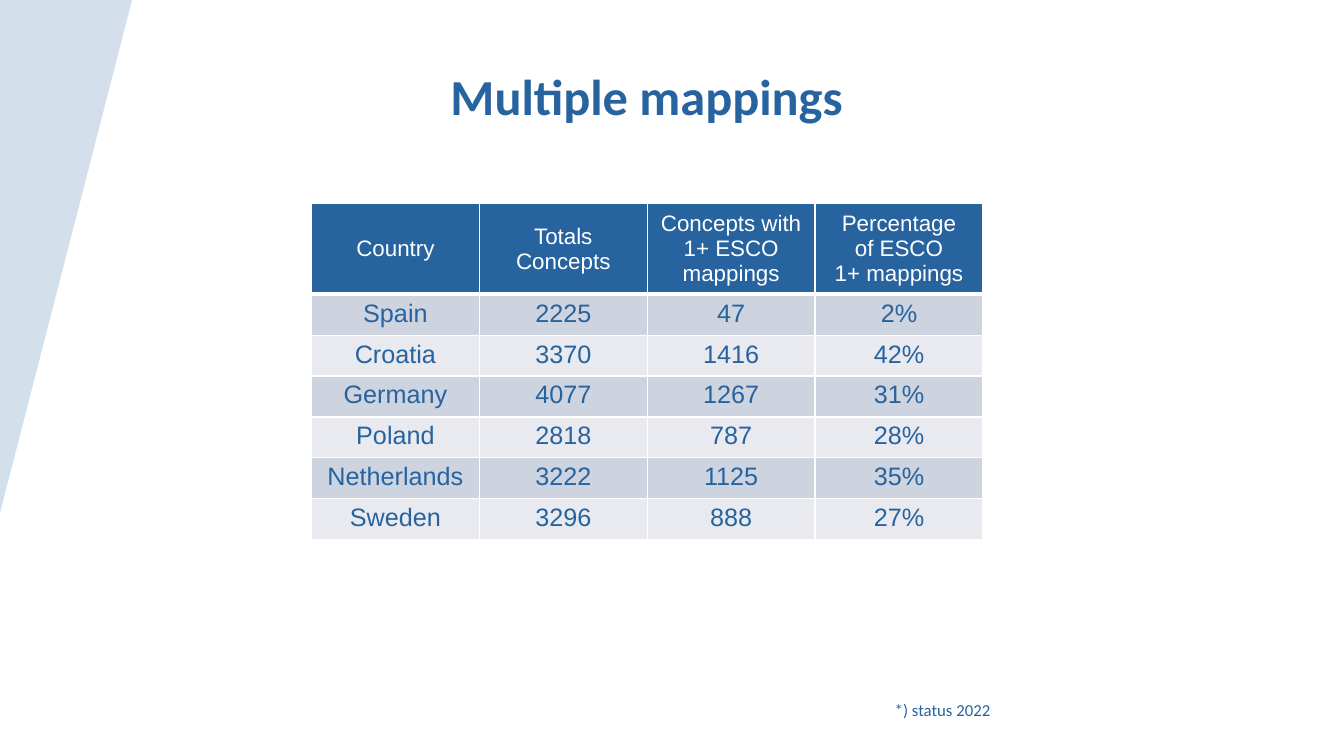
"""Builds the slide on multiple mappings per country."""
import lxml.etree
import pptx
import pptx.dml.color
import pptx.enum.shapes
import pptx.enum.text
import pptx.oxml
import pptx.oxml.ns
import pptx.util

Cm = pptx.util.Cm
Pt = pptx.util.Pt
Anchor = pptx.enum.text.MSO_ANCHOR

BLUE = "27639E"
WHITE = "FFFFFF"
BANDS = ("CDD3DF", "E8EAF0")

HEADERS = (
    "Country",
    "Totals\nConcepts",
    "Concepts with 1+ ESCO mappings",
    "Percentage\nof ESCO\n1+ mappings",
)
COUNTRIES = (
    ("Spain", "2225", "47", "2%"),
    ("Croatia", "3370", "1416", "42%"),
    ("Germany", "4077", "1267", "31%"),
    ("Poland", "2818", "787", "28%"),
    ("Netherlands", "3222", "1125", "35%"),
    ("Sweden", "3296", "888", "27%"),
)


def color(value):
    return pptx.dml.color.RGBColor.from_string(value)


def write(frame, text, *, size, font, ink=BLUE, bold=False):
    for index, line in enumerate(text.split("\n")):
        para = frame.add_paragraph() if index else frame.paragraphs[0]
        para.alignment = pptx.enum.text.PP_ALIGN.CENTER
        span = para.add_run()
        span.text = line
        span.font.size = Pt(size)
        span.font.name = font
        span.font.bold = bold
        span.font.color.rgb = color(ink)


class Page:
    def __init__(self, slide, heading_font="Calibri", table_font="Arial"):
        self.slide = slide
        self.heading_font = heading_font
        self.table_font = table_font

    def corner(self, width, height, alpha):
        shape = self.slide.shapes.add_shape(
            pptx.enum.shapes.MSO_SHAPE.RIGHT_TRIANGLE, 0, 0, Cm(width), Cm(height)
        )
        shape.shadow.inherit = False
        shape.fill.solid()
        shape.fill.fore_color.rgb = color(BLUE)
        shape.line.fill.background()
        properties = shape.element.spPr
        properties.find(pptx.oxml.ns.qn("a:xfrm")).set("flipV", "1")
        tint = properties.find(".//" + pptx.oxml.ns.qn("a:srgbClr"))
        lxml.etree.SubElement(tint, pptx.oxml.ns.qn("a:alpha"), val=str(alpha * 1000))

    def text(self, text, left, top, width, height, anchor=Anchor.TOP, **style):
        box = self.slide.shapes.add_textbox(Cm(left), Cm(top), Cm(width), Cm(height))
        box.text_frame.word_wrap = True
        box.text_frame.vertical_anchor = anchor
        write(box.text_frame, text, font=self.heading_font, **style)

    def cell(self, cell, text, fill, anchor, bottom, **style):
        properties = cell._tc.get_or_add_tcPr()
        for side, width in (("L", 1), ("R", 1), ("T", 1), ("B", bottom)):
            properties.append(pptx.oxml.parse_xml(
                f'<a:ln{side} {pptx.oxml.ns.nsdecls("a")} w="{Pt(width)}"><a:solidFill>'
                f'<a:srgbClr val="{WHITE}"/></a:solidFill></a:ln{side}>'
            ))
        cell.fill.solid()
        cell.fill.fore_color.rgb = color(fill)
        cell.vertical_anchor = anchor
        write(cell.text_frame, text, font=self.table_font, **style)

    def table(self, left, top, column_width, header_height, row_height):
        rows = (HEADERS, *COUNTRIES)
        grid = self.slide.shapes.add_table(
            len(rows), len(HEADERS), Cm(left), Cm(top),
            Cm(column_width * len(HEADERS)),
            Cm(header_height + row_height * len(COUNTRIES)),
        ).table
        for column in grid.columns:
            column.width = Cm(column_width)
        for index, texts in enumerate(rows):
            grid.rows[index].height = Cm(row_height if index else header_height)
            if index:
                style = dict(fill=BANDS[(index - 1) % 2], anchor=Anchor.TOP, bottom=1, size=18)
            else:
                style = dict(fill=BLUE, anchor=Anchor.MIDDLE, bottom=3, size=16, ink=WHITE)
            for place, text in enumerate(texts):
                self.cell(grid.cell(index, place), text, **style)


def main():
    deck = pptx.Presentation()
    deck.slide_width = Cm(33.87)
    deck.slide_height = Cm(19.05)
    page = Page(deck.slides.add_slide(deck.slide_layouts[6]))
    page.corner(3.33, 12.93, alpha=20)
    page.text("Multiple mappings", 6.32, 0.71, 19.96, 2.59,
              anchor=Anchor.BOTTOM, size=36, bold=True)
    page.table(7.85, 5.13, column_width=4.23, header_height=2.13, row_height=1.03)
    page.text("*) status 2022", 18.14, 17.5, 11.23, 0.77, size=12)
    deck.save("out.pptx")


if __name__ == "__main__":
    main()
